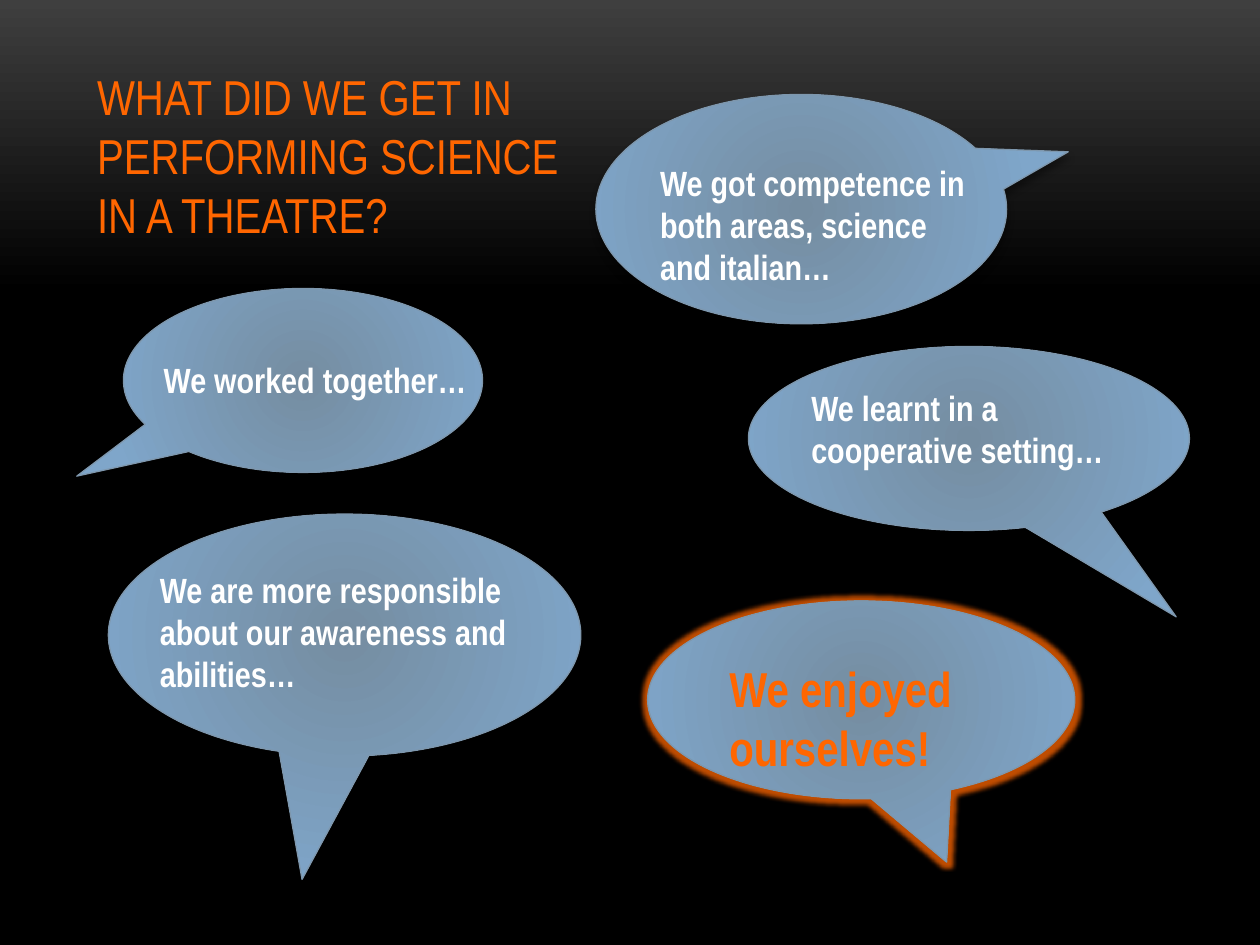
from lxml import etree
from pptx import Presentation
from pptx.dml.color import RGBColor
from pptx.enum.shapes import MSO_SHAPE
from pptx.enum.text import MSO_ANCHOR, PP_ALIGN
from pptx.oxml import parse_xml
from pptx.oxml.ns import nsdecls, qn
from pptx.util import Inches, Pt

CALLOUT = MSO_SHAPE.OVAL_CALLOUT
TOP, LEFT = MSO_ANCHOR.TOP, PP_ALIGN.LEFT

THEME = {
    "font": "Arial Narrow",
    "text": "FFFFFF", "accent": "FF6600", "outline": "7E97AD", "shadow": "000000",
    "bubble": [(0, "758DA1"), (100, "7FA6CA")],
    "background": [(0, "3F3F3F"), (31, "000000"), (100, "000000")],
    "body": 20, "large": 28,
}
CIRCLE = '<a:path path="circle"><a:fillToRect l="100000" t="100000" r="100000" b="100000"/></a:path>'
DOWN = '<a:lin ang="5400000" scaled="0"/>'
SHADOW = (f'<a:outerShdw blurRad="{Pt(4)}" dist="{Pt(3.4)}" dir="5400000" rotWithShape="0">'
          f'<a:srgbClr val="{THEME["shadow"]}"><a:alpha val="40000"/></a:srgbClr></a:outerShdw>')
GLOW = (f'<a:glow rad="{Pt(5)}"><a:srgbClr val="{THEME["accent"]}">'
        '<a:alpha val="75000"/></a:srgbClr></a:glow>')


def set_gradient(parent, stops, direction):
    """Replace the gradient fill found below parent."""
    old = next(parent.iter(qn("a:gradFill")))
    marks = "".join(f'<a:gs pos="{pos * 1000}"><a:srgbClr val="{color}"/></a:gs>'
                    for pos, color in stops)
    new = parse_xml(f'<a:gradFill {nsdecls("a")} rotWithShape="1">'
                    f'<a:gsLst>{marks}</a:gsLst>{direction}</a:gradFill>')
    old.getparent().replace(old, new)


def write_text(shape, box, text, size, color, bold):
    shape.left, shape.top, shape.width, shape.height = map(Inches, box)
    tf = shape.text_frame
    tf.word_wrap = True
    tf.vertical_anchor = TOP
    p = tf.paragraphs[0]
    p.alignment = LEFT
    r = p.add_run()
    r.text = text
    style = {"name": THEME["font"], "size": Pt(size), "bold": bold}
    for key, value in style.items():
        setattr(r.font, key, value)
    r.font.color.rgb = RGBColor.from_string(color)


prs = Presentation()
prs.slide_width, prs.slide_height = Inches(10), Inches(7.5)
s = prs.slides.add_slide(prs.slide_layouts[5])

s.background.fill.gradient()
set_gradient(s.element, THEME["background"], DOWN)

write_text(s.shapes.title, (0.67, 0.48, 4.06, 1.51),
           "WHAT DID WE GET IN PERFORMING SCIENCE IN A THEATRE?",
           THEME["large"], THEME["accent"], False)

# bubble box, tail tip, text box, text, size, colour, extra effect
plain = (THEME["body"], THEME["text"], "")
bubbles = [
    ((0.98, 2.29, 2.85, 1.46), (-0.63, 0.52), (1.2, 2.8, 2.62, 0.44),
     "We worked together…", *plain),
    ((4.73, 0.75, 3.26, 1.82), (0.65, -0.25), (5.14, 1.23, 2.62, 1.11),
     "We got competence in both areas, science and italian…", *plain),
    ((5.94, 2.75, 3.5, 1.46), (0.47, 0.97), (6.34, 3.02, 2.62, 0.77),
     "We learnt in a cooperative setting…", *plain),
    ((0.86, 4.08, 3.75, 1.92), (-0.09, 1.01), (1.17, 4.46, 3.44, 1.11),
     "We are more responsible about our awareness and abilities…", *plain),
    ((5.14, 4.77, 3.39, 1.57), (0.2, 0.82), (5.69, 5.18, 2.85, 1.04),
     "We enjoyed ourselves!", THEME["large"], THEME["accent"], GLOW),
]
for box, tail, text_box, text, size, color, glow in bubbles:
    sp = s.shapes.add_shape(CALLOUT, *map(Inches, box))
    sp.adjustments[0], sp.adjustments[1] = tail
    sp.fill.gradient()
    sp.line.color.rgb = RGBColor.from_string(THEME["outline"])
    sp.line.width = Pt(0.75)
    sp.shadow.inherit = False
    spPr = sp.element.spPr
    set_gradient(spPr, THEME["bubble"], CIRCLE)
    effects = etree.fromstring(f'<a:effectLst {nsdecls("a")}>{glow}{SHADOW}</a:effectLst>')
    spPr.find(qn("a:effectLst")).extend(list(effects))

    tb = s.shapes.add_textbox(*map(Inches, text_box))
    write_text(tb, text_box, text, size, color, True)

prs.save("out.pptx")
